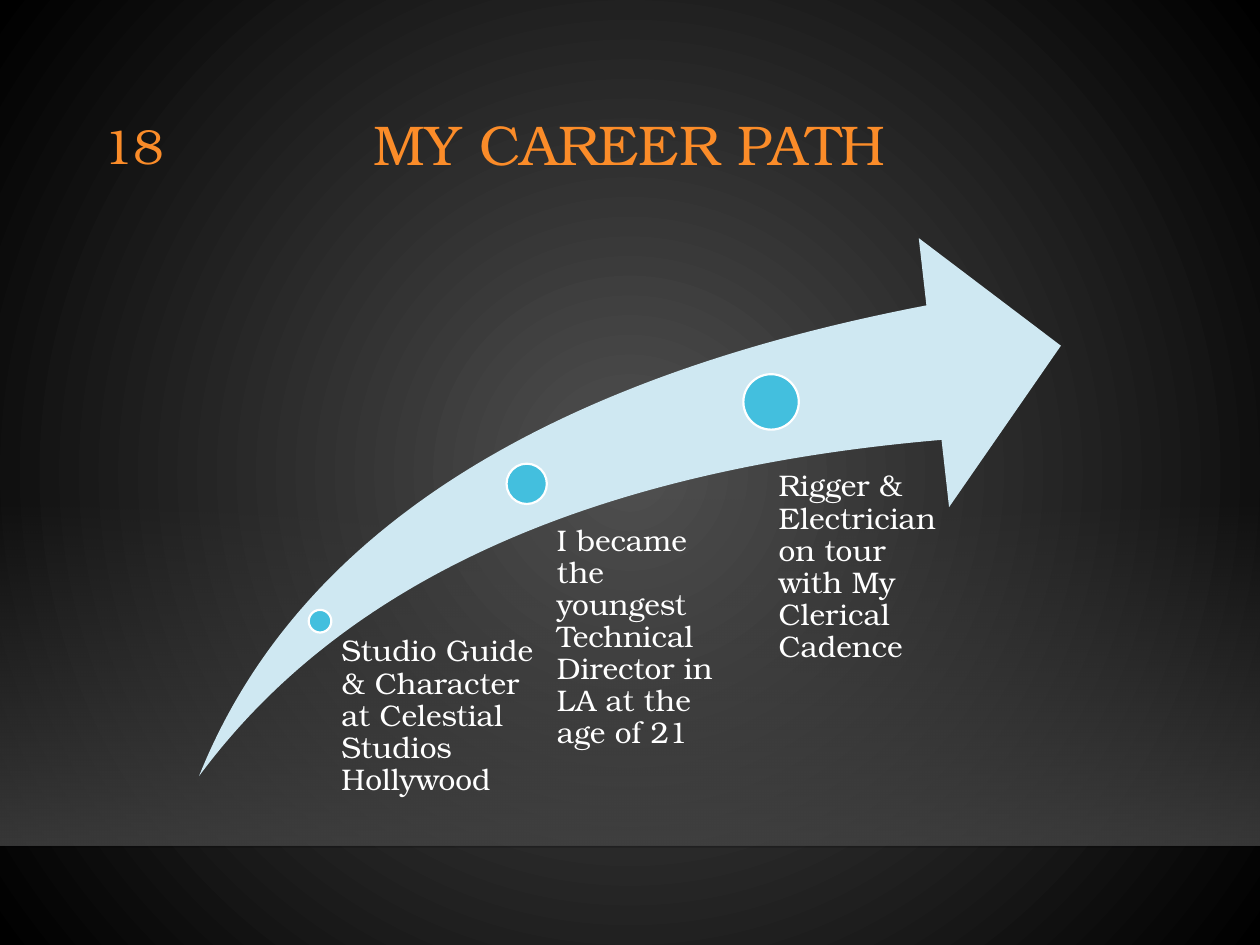
import pptx
import pptx.dml.color
import pptx.enum.shapes
import pptx.enum.text
import pptx.oxml
import pptx.oxml.ns
import pptx.util
from dataclasses import dataclass

Inches = pptx.util.Inches
Shape = pptx.enum.shapes.MSO_SHAPE
Align = pptx.enum.text.PP_ALIGN
qn = pptx.oxml.ns.qn


@dataclass(frozen=True)
class Theme:
    font: str = "TeX Gyre Bonum"
    title_size: int = 32
    number_size: int = 28
    label_size: int = 17
    accent: str = "FB8C29"
    text: str = "FFFFFF"
    arrow: str = "CFE8F2"
    dot: str = "43BFDE"
    glow: str = "505050"
    dark: str = "000000"
    floor: str = "454545"
    edge: str = "000001"


THEME = Theme()

# Milestones: dot centre x, y, diameter; label left, top, width, height, inset; wording
MILESTONES = [
    (2.54, 4.93, 0.18, (2.62, 5.05, 1.63, 1.29), 0.09,
     "Studio Guide & Character at Celestial Studios Hollywood"),
    (4.18, 3.84, 0.32, (4.25, 4.17, 1.64, 1.81), 0.17,
     "I became the youngest Technical Director in LA at the age of 21"),
    (6.12, 3.19, 0.44, (5.94, 3.74, 1.64, 1.51), 0.24,
     "Rigger & Electrician on tour with My Clerical Cadence"),
]


def rgb(value):
    return pptx.dml.color.RGBColor.from_string(value)


def drawing_element(tag, content=""):
    return pptx.oxml.parse_xml(
        f'<a:{tag} {pptx.oxml.ns.nsdecls("a")}>{content}</a:{tag}>')


def set_gradient(owner, fill, stops, direction):
    """Fill with (position, colour, opacity) stops, all in percent."""
    fill.gradient()
    stop_xml = "".join(
        f'<a:gs pos="{position * 1000}"><a:srgbClr val="{color}">'
        f'<a:alpha val="{opacity * 1000}"/></a:srgbClr></a:gs>'
        for position, color, opacity in stops)
    old = owner.find(".//" + qn("a:gradFill"))
    new = drawing_element("gradFill", f"<a:gsLst>{stop_xml}</a:gsLst>{direction}")
    old.getparent().replace(old, new)


def add_plain_shape(page, kind, frame, color=None, outline=None):
    shape = page.shapes.add_shape(kind, *map(Inches, frame))
    shape.shadow.inherit = False
    if color:
        shape.fill.solid()
        shape.fill.fore_color.rgb = rgb(color)
    if outline:
        shape.line.color.rgb = rgb(outline)
        shape.line.width = pptx.util.Pt(1.25)
    else:
        shape.line.fill.background()
    return shape


def add_text(page, frame, text, size, color, align=Align.LEFT, spacing=0.9, insets=None):
    box = page.shapes.add_textbox(*map(Inches, frame))
    body = box.text_frame
    body.word_wrap = True
    if insets:
        (body.margin_left, body.margin_top,
         body.margin_right, body.margin_bottom) = map(Inches, insets)
    paragraph = body.paragraphs[0]
    paragraph.text = text
    paragraph.alignment = align
    paragraph.line_spacing = spacing
    paragraph.font.name = THEME.font
    paragraph.font.size = pptx.util.Pt(size)
    paragraph.font.color.rgb = rgb(color)


def add_backdrop(page):
    # Radial glow behind everything
    set_gradient(
        page.element, page.background.fill,
        [(0, THEME.glow, 100), (100, THEME.dark, 100)],
        '<a:path path="circle"><a:fillToRect l="50000" t="50000" r="50000" b="50000"/></a:path>')

    # Floor that fades in downwards
    floor = add_plain_shape(page, Shape.RECTANGLE, (0, 3.96, 10, 2.75))
    set_gradient(floor.element, floor.fill,
                 [(0, THEME.floor, 0), (100, THEME.floor, 80)],
                 '<a:lin ang="5400000" scaled="0"/>')

    # Faint floor edge
    edge = page.shapes.add_connector(
        pptx.enum.shapes.MSO_CONNECTOR.STRAIGHT,
        Inches(0), Inches(6.72), Inches(10), Inches(6.72))
    edge.line.color.rgb = rgb(THEME.edge)
    edge.line.width = pptx.util.Pt(1)
    edge.element.find(".//" + qn("a:srgbClr")).append(
        pptx.oxml.parse_xml(f'<a:alpha {pptx.oxml.ns.nsdecls("a")} val="20000"/>'))
    edge.element.spPr.append(drawing_element("effectLst"))


def add_milestone(page, center_x, center_y, diameter, label_frame, inset, text):
    dot_frame = (center_x - diameter / 2, center_y - diameter / 2, diameter, diameter)
    add_plain_shape(page, Shape.OVAL, dot_frame, THEME.dot, THEME.text)
    add_text(page, label_frame, text, THEME.label_size, THEME.text,
             insets=(inset, 0, 0, 0))


def main():
    deck = pptx.Presentation()
    deck.slide_width, deck.slide_height = Inches(10), Inches(7.5)
    page = deck.slides.add_slide(deck.slide_layouts[6])
    add_backdrop(page)

    # Heading
    add_text(page, (1.58, 0.88, 6.84, 1.15), "MY CAREER PATH",
             THEME.title_size, THEME.accent, Align.CENTER)

    # Rising career arrow with its milestones
    arrow = add_plain_shape(page, Shape.SWOOSH_ARROW, (1.58, 1.89, 6.84, 4.27), THEME.arrow)
    arrow.adjustments[0] = arrow.adjustments[1] = 0.25
    for milestone in MILESTONES:
        add_milestone(page, *milestone)

    # Page number
    add_text(page, (0.53, 0.87, 0.87, 0.55), "18",
             THEME.number_size, THEME.accent, Align.RIGHT, spacing=1.0)

    deck.save("out.pptx")


if __name__ == "__main__":
    main()
